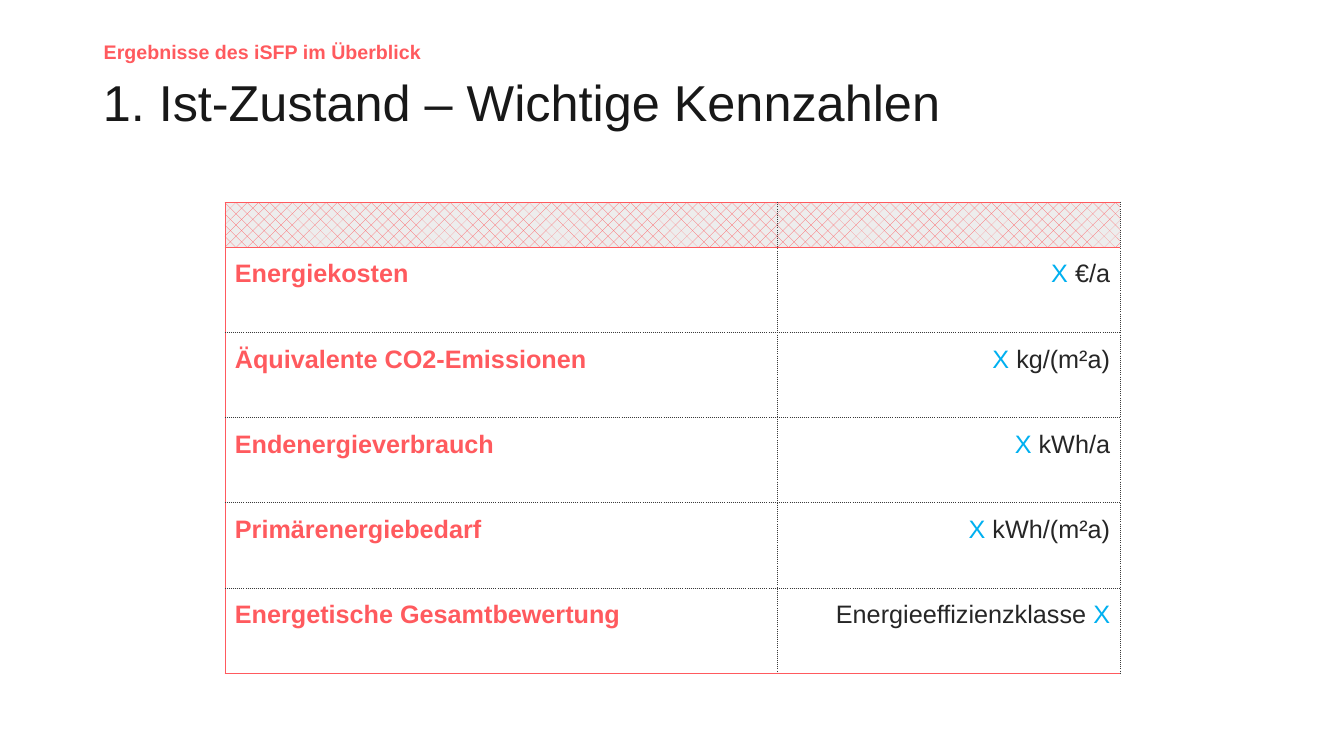
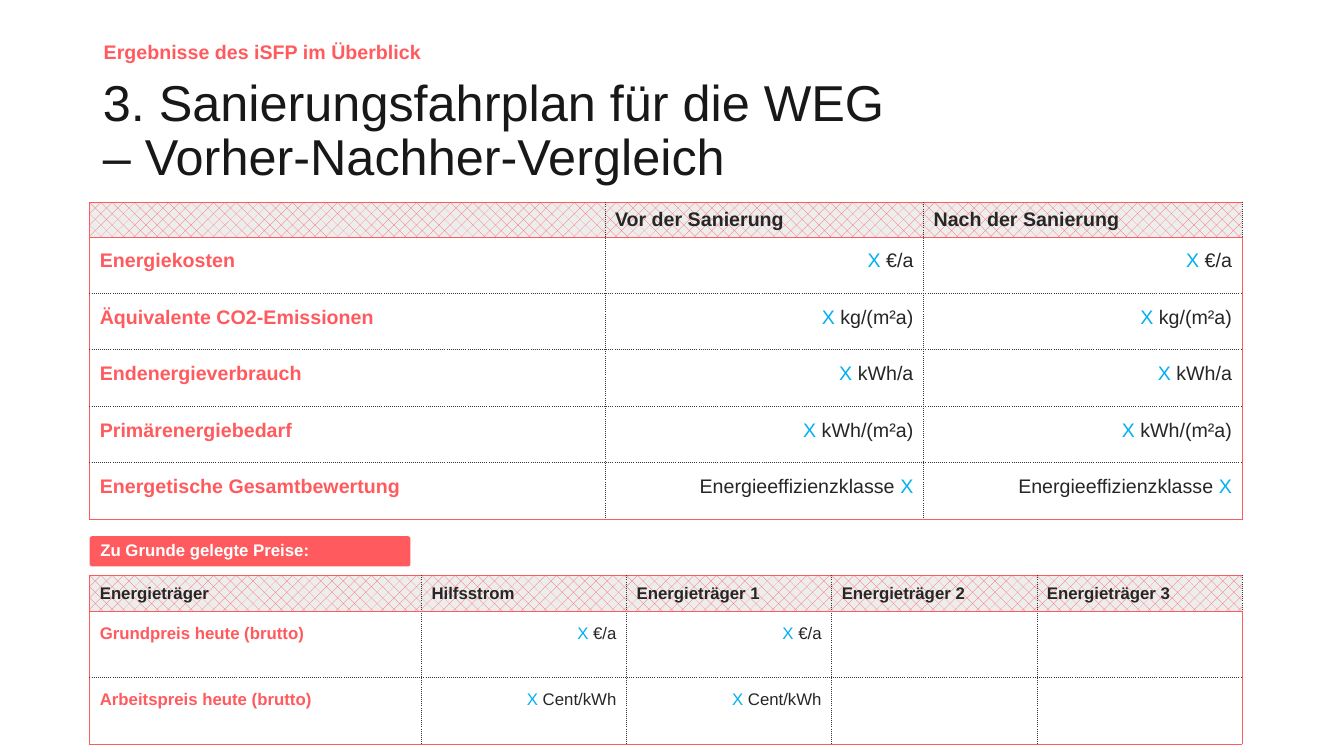
from lxml.etree import SubElement
from pptx import Presentation
from pptx.dml.color import RGBColor
from pptx.enum.dml import MSO_PATTERN
from pptx.enum.shapes import MSO_SHAPE
from pptx.enum.text import MSO_ANCHOR as ANCHOR, MSO_AUTO_SIZE as AUTO, PP_ALIGN as ALIGN
from pptx.oxml.ns import qn
from pptx.util import Inches, Pt

CORAL = RGBColor(0xFF, 0x5A, 0x5E)
BLUE = RGBColor(0x00, 0xB0, 0xF0)
INK = RGBColor(0x18, 0x18, 0x18)
TEXT = RGBColor(0x26, 0x26, 0x26)
RULE = RGBColor(0x3A, 0x3A, 0x3A)
PALE = RGBColor(0xED, 0xED, 0xED)
WHITE = RGBColor(0xFF, 0xFF, 0xFF)

SOLID = (CORAL, 0.5, "solid")
EDGE = (CORAL, 0.75, "solid")
DOTTED = (RULE, 0.5, "dot")

METRICS = [
    ("Energiekosten", "X €/a"),
    ("Äquivalente CO2-Emissionen", "X kg/(m²a)"),
    ("Endenergieverbrauch", "X kWh/a"),
    ("Primärenergiebedarf", "X kWh/(m²a)"),
    ("Energetische Gesamtbewertung", "Energieeffizienzklasse X"),
]


class Deck:
    font = "Arial"

    def __init__(self):
        self.prs = Presentation()
        self.prs.slide_width = Inches(13.33)
        self.prs.slide_height = Inches(7.5)
        self.s = None

    def run(self, p, text, size, color, bold=False):
        r = p.add_run()
        r.text = text
        r.font.name = self.font
        r.font.size = Pt(size)
        r.font.bold = bold
        r.font.color.rgb = color

    def slide(self, kicker, *title_lines):
        self.s = self.prs.slides.add_slide(self.prs.slide_layouts[5])
        self.title(title_lines)
        self.kicker(kicker)

    def title(self, lines):
        sp = self.s.shapes.title
        sp.left, sp.top = Inches(0.92), Inches(0.72)
        sp.width, sp.height = Inches(11.5), Inches(0.6)
        tf = sp.text_frame
        tf.auto_size = AUTO.NONE
        tf.vertical_anchor = ANCHOR.TOP
        p = tf.paragraphs[0]
        p.alignment = ALIGN.LEFT
        p.line_spacing = 0.9
        for i, line in enumerate(lines):
            if i:
                p.add_line_break()
            self.run(p, line, 36, INK)

    def kicker(self, text):
        sp = self.s.shapes.add_textbox(Inches(0.93), Inches(0.37), Inches(7.68), Inches(0.4))
        sp.text_frame.word_wrap = True
        p = sp.text_frame.paragraphs[0]
        p.line_spacing = 0.9
        self.run(p, text, 14, CORAL, True)

    def label(self, text, left, top, width, height):
        sp = self.s.shapes.add_shape(MSO_SHAPE.ROUNDED_RECTANGLE, Inches(left), Inches(top),
                                     Inches(width), Inches(height))
        sp.adjustments[0] = 0.08
        sp.shadow.inherit = False
        sp.fill.solid()
        sp.fill.fore_color.rgb = CORAL
        sp.line.fill.background()
        tf = sp.text_frame
        tf.word_wrap = True
        tf.vertical_anchor = ANCHOR.MIDDLE
        p = tf.paragraphs[0]
        p.alignment = ALIGN.LEFT
        p.line_spacing = 0.9
        self.run(p, text, 12, WHITE, True)

    def borders(self, cell, sides):
        tc_pr = cell._tc.get_or_add_tcPr()
        for i, (side, (color, width, dash)) in enumerate(zip("LRTB", sides)):
            ln = SubElement(tc_pr, qn(f"a:ln{side}"), w=str(Pt(width)))
            fill = SubElement(ln, qn("a:solidFill"))
            SubElement(fill, qn("a:srgbClr"), val=str(color))
            SubElement(ln, qn("a:prstDash"), val=dash)
            tc_pr.insert(i, ln)

    def cell(self, cell, text, size, is_head, is_label):
        p = cell.text_frame.paragraphs[0]
        if is_head:
            cell.vertical_anchor = ANCHOR.MIDDLE
            cell.fill.patterned()
            cell.fill.pattern = MSO_PATTERN.PERCENT_25
            cell.fill.fore_color.rgb = CORAL
            cell.fill.back_color.rgb = PALE
        else:
            cell.margin_top = cell.margin_bottom = Inches(0.13)
            cell.fill.background()
        if not text:
            p._p.get_or_add_endParaRPr().set("sz", str(size * 100))
        elif is_head or is_label:
            self.run(p, text, size, TEXT if is_head else CORAL, True)
        else:
            p.alignment = ALIGN.RIGHT
            for part in filter(None, text.partition("X")):
                self.run(p, part, size, BLUE if part == "X" else TEXT)

    def table(self, rows, box, label_width, head_height, size, right=EDGE):
        left, top, width, height = box
        last_row, last_col = len(rows) - 1, len(rows[0]) - 1
        tbl = self.s.shapes.add_table(last_row + 1, last_col + 1, Inches(left), Inches(top),
                                      Inches(width), Inches(height)).table
        tbl.first_row = tbl.horz_banding = False
        for j, col in enumerate(tbl.columns):
            col.width = Inches((width - label_width) / last_col if j else label_width)
        for i, row in enumerate(tbl.rows):
            row.height = Inches((height - head_height) / last_row if i else head_height)
            for j, cell in enumerate(row.cells):
                self.cell(cell, rows[i][j], size, i == 0, j == 0)
                self.borders(cell, (
                    DOTTED if j else SOLID,
                    right if i and j == last_col else DOTTED,
                    SOLID if i < 2 else DOTTED,
                    SOLID if i in (0, last_row) else DOTTED,
                ))


def main():
    deck = Deck()
    kicker = "Ergebnisse des iSFP im Überblick"

    deck.slide(kicker, "1. Ist-Zustand – Wichtige Kennzahlen")
    deck.table([("", "")] + METRICS, (2.23, 2.01, 8.88, 4.67), 5.48, 0.44, 18, DOTTED)

    deck.slide(kicker, "3. Sanierungsfahrplan für die WEG", "– Vorher-Nachher-Vergleich")
    comparison = [("", "Vor der Sanierung", "Nach der Sanierung")]
    comparison += [(name, value, value) for name, value in METRICS]
    deck.table(comparison, (0.89, 2.01, 11.43, 3.14), 5.11, 0.34, 14)

    deck.label("Zu Grunde gelegte Preise:", 0.89, 5.32, 3.18, 0.3)
    prices = [
        ("Energieträger", "Hilfsstrom", "Energieträger 1", "Energieträger 2", "Energieträger 3"),
        ("Grundpreis heute (brutto)", "X €/a", "X €/a", "", ""),
        ("Arbeitspreis heute (brutto)", "X Cent/kWh", "X Cent/kWh", "", ""),
    ]
    deck.table(prices, (0.89, 5.71, 11.43, 1.67), 3.29, 0.35, 12)

    deck.prs.save("out.pptx")


if __name__ == "__main__":
    main()
